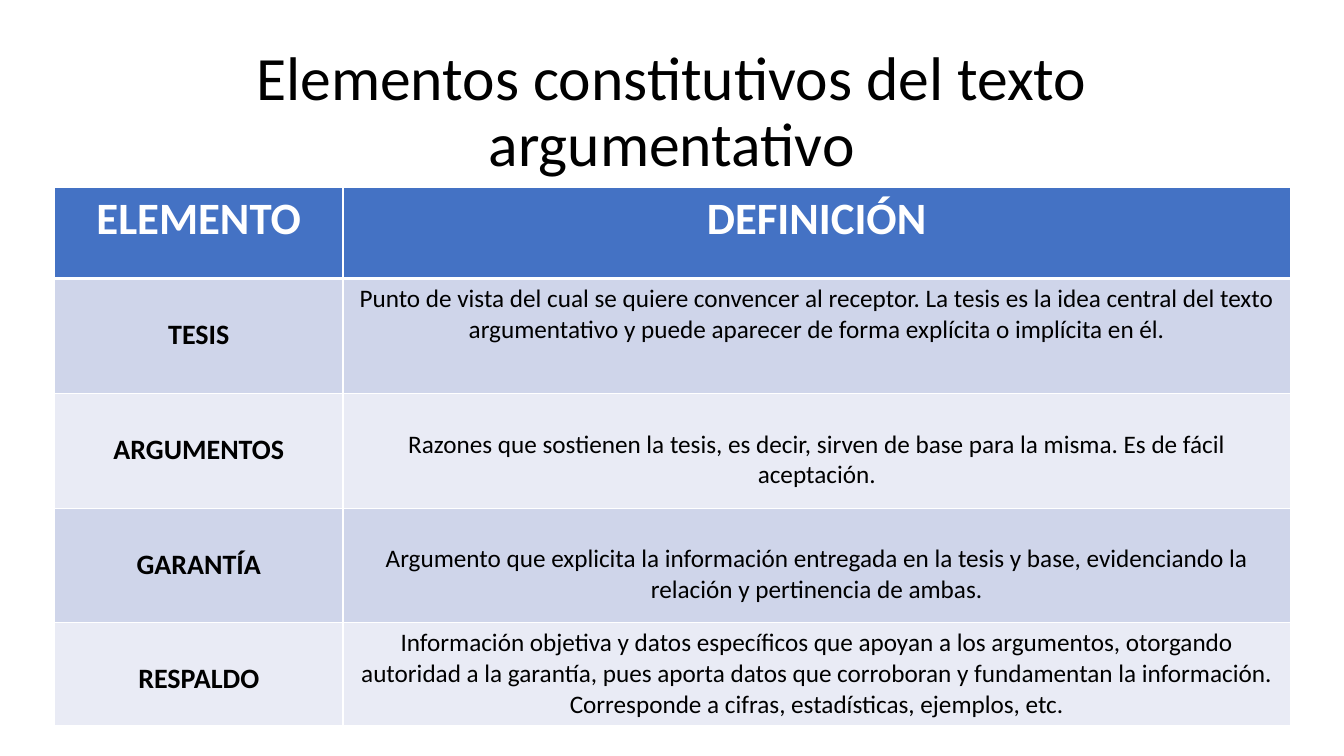
import pptx
import pptx.util
import pptx.dml.color
import pptx.enum.text
import pptx.oxml
import pptx.oxml.ns

Pt = pptx.util.Pt
COLORS = {
    "white": "FFFFFF",
    "black": "000000",
    "header": "4472C4",
    "band_dark": "CFD5EA",
    "band_light": "E9EBF5",
}
TITLE = "Elementos constitutivos del texto argumentativo"
HEADERS = ("ELEMENTO", "DEFINICIÓN")
# Label, definition, top margin of the definition
ELEMENTS = [
    ("TESIS",
     "Punto de vista del cual se quiere convencer al receptor. La tesis es la idea "
     "central del texto argumentativo y puede aparecer de forma explícita o "
     "implícita en él.", 3.6),
    ("ARGUMENTOS",
     "Razones que sostienen la tesis, es decir, sirven de base para la misma. "
     "Es de fácil aceptación.", 25.6),
    ("GARANTÍA",
     "Argumento que explicita la información entregada en la tesis y base, "
     "evidenciando la relación y pertinencia de ambas.", 25.6),
    ("RESPALDO",
     "Información objetiva y datos específicos que apoyan a los argumentos, "
     "otorgando autoridad a la garantía, pues aporta datos que corroboran y "
     "fundamentan la información. Corresponde a cifras, estadísticas, ejemplos, "
     "etc.", 3.6),
]
LABEL_MARGIN = 28
COLUMN_WIDTHS = (206, 676.8)
ROW_HEIGHTS = (65.5, 82, 82, 82, 73)


class SlideBuilder:
    """Holds the style and the current slide."""

    def __init__(self, deck, font="Calibri"):
        self.font = font
        self.slide = deck.slides.add_slide(deck.slide_layouts[5])

    def color(self, name):
        return pptx.dml.color.RGBColor.from_string(COLORS[name])

    def style(self, para, size, color, bold=False):
        para.alignment = pptx.enum.text.PP_ALIGN.CENTER
        para.font.name = self.font
        para.font.size = Pt(size)
        para.font.bold = bold
        para.font.color.rgb = self.color(color)

    def title(self, text, left, top, width, height):
        box = self.slide.shapes.title
        box.left, box.top, box.width, box.height = map(Pt, (left, top, width, height))
        frame = box.text_frame
        frame.text = text
        frame.word_wrap = True
        frame.auto_size = pptx.enum.text.MSO_AUTO_SIZE.NONE
        frame.vertical_anchor = pptx.enum.text.MSO_ANCHOR.MIDDLE
        frame.paragraphs[0].line_spacing = 0.9
        self.style(frame.paragraphs[0], 44, "black")

    def table(self, left, top, widths, heights):
        table = self.slide.shapes.add_table(
            len(heights), len(widths), Pt(left), Pt(top),
            Pt(sum(widths)), Pt(sum(heights))).table
        for column, width in zip(table.columns, widths):
            column.width = Pt(width)
        for row, height in zip(table.rows, heights):
            row.height = Pt(height)
        return table

    def cell(self, cell, text, size, color, fill, bold=False, margin_top=3.6,
             line_above=1, line_below=1):
        cell.text = text
        cell.margin_top = Pt(margin_top)
        self.style(cell.text_frame.paragraphs[0], size, color, bold)
        self.borders(cell, {"L": 1, "R": 1, "T": line_above, "B": line_below})
        cell.fill.solid()
        cell.fill.fore_color.rgb = self.color(fill)

    def borders(self, cell, widths):
        properties = cell._tc.get_or_add_tcPr()
        for side, width in widths.items():
            properties.append(pptx.oxml.parse_xml(
                f'<a:ln{side} {pptx.oxml.ns.nsdecls("a")} w="{Pt(width)}">'
                f'<a:solidFill><a:srgbClr val="{COLORS["white"]}"/></a:solidFill>'
                f'</a:ln{side}>'))


def main():
    deck = pptx.Presentation()
    deck.slide_width, deck.slide_height = Pt(960), Pt(540)
    builder = SlideBuilder(deck)

    # Title
    builder.title(TITLE, 66, 28.8, 828, 104.4)

    # Table header
    table = builder.table(39, 133.5, COLUMN_WIDTHS, ROW_HEIGHTS)
    for column, header in enumerate(HEADERS):
        builder.cell(table.cell(0, column), header, 32, "white", "header",
                     bold=True, line_below=3)

    # Table body
    for row, (label, definition, margin) in enumerate(ELEMENTS, start=1):
        fill = "band_dark" if row % 2 else "band_light"
        line_above = 3 if row == 1 else 1
        builder.cell(table.cell(row, 0), label, 20, "black", fill, bold=True,
                     margin_top=LABEL_MARGIN, line_above=line_above)
        builder.cell(table.cell(row, 1), definition, 18, "black", fill,
                     margin_top=margin, line_above=line_above)

    deck.save("out.pptx")


if __name__ == "__main__":
    main()
